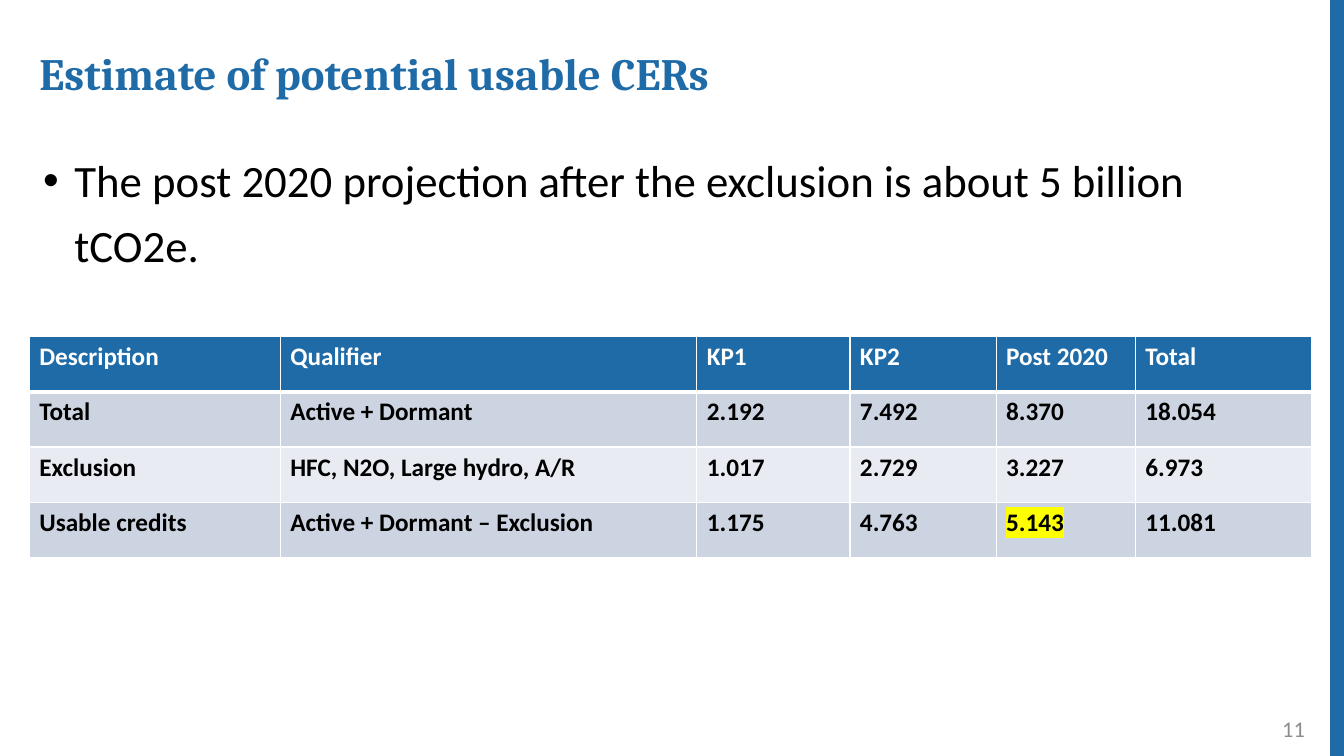
from dataclasses import dataclass

from lxml import etree
from pptx import Presentation
from pptx.dml.color import RGBColor
from pptx.enum.shapes import MSO_CONNECTOR
from pptx.enum.text import MSO_ANCHOR, PP_ALIGN
from pptx.oxml.ns import qn
from pptx.util import Inches, Pt

STRAIGHT = MSO_CONNECTOR.STRAIGHT
TOP, MIDDLE = MSO_ANCHOR.TOP, MSO_ANCHOR.MIDDLE
LEFT, RIGHT = PP_ALIGN.LEFT, PP_ALIGN.RIGHT


@dataclass(frozen=True)
class Theme:
    blue: str = "1F6BA7"
    black: str = "000000"
    white: str = "FFFFFF"
    grey: str = "8C8C8C"
    bands: tuple = ("CDD4E1", "E8EBF1")
    yellow: str = "FFFF00"
    heading: str = "Cambria"
    body: str = "Calibri"
    large: int = 32
    cell: int = 18
    number: int = 16


THEME = Theme()
COLUMNS = (2.49, 4.13, 1.52, 1.45, 1.38, 1.75)
CREDITS = (
    ("Description", "Qualifier", "KP1", "KP2", "Post 2020", "Total"),
    ("Total", "Active + Dormant", "2.192", "7.492", "8.370", "18.054"),
    ("Exclusion", "HFC, N2O, Large hydro, A/R", "1.017", "2.729", "3.227", "6.973"),
    ("Usable credits", "Active + Dormant – Exclusion", "1.175", "4.763", "5.143", "11.081"),
)
HIGHLIGHTED = (3, 4)


def style_run(r, size, color, name=THEME.body, bold=False):
    r.font.size = Pt(size)
    r.font.name = name
    r.font.bold = bold
    r.font.color.rgb = RGBColor.from_string(color)


def add_text(s, box, text, size, color):
    tf = s.shapes.add_textbox(*map(Inches, box)).text_frame
    tf.word_wrap = True
    p = tf.paragraphs[0]
    p.text = text
    style_run(p.runs[0], size, color)
    return tf


def add_edge(s, x, height):
    edge = s.shapes.add_connector(STRAIGHT, Inches(x), 0, Inches(x), Inches(height))
    edge.line.color.rgb = RGBColor.from_string(THEME.blue)
    edge.line.width = Pt(12)
    etree.SubElement(edge._element.spPr, qn("a:effectLst"))


def set_title(s, box, text):
    title = s.shapes.title
    title.left, title.top, title.width, title.height = map(Inches, box)
    tf = title.text_frame
    tf.word_wrap = True
    tf.vertical_anchor = TOP
    p = tf.paragraphs[0]
    p.text = text
    p.alignment = LEFT
    p.line_spacing = 0.9
    style_run(p.runs[0], THEME.large, THEME.blue, THEME.heading, True)


def add_bullet(s, box, text):
    p = add_text(s, box, text, THEME.large, THEME.black).paragraphs[0]
    p.line_spacing = 1.2
    pPr = p._p.get_or_add_pPr()
    pPr.set("marL", str(Inches(0.31)))
    pPr.set("indent", str(-Inches(0.31)))
    etree.SubElement(pPr, qn("a:buFont"), typeface="Arial")
    etree.SubElement(pPr, qn("a:buChar"), char="•")


def add_page_number(s, box, text):
    tf = add_text(s, box, text, THEME.number, THEME.grey)
    tf.vertical_anchor = MIDDLE
    tf.paragraphs[0].alignment = RIGHT


def set_borders(cell, top, bottom):
    tcPr = cell._tc.get_or_add_tcPr()
    for i, (side, width) in enumerate((("L", 1), ("R", 1), ("T", top), ("B", bottom))):
        ln = etree.Element(qn(f"a:ln{side}"), w=str(Pt(width)))
        fill = etree.SubElement(ln, qn("a:solidFill"))
        etree.SubElement(fill, qn("a:srgbClr"), val=THEME.white)
        tcPr.insert(i, ln)


def highlight(r):
    mark = etree.Element(qn("a:highlight"))
    etree.SubElement(mark, qn("a:srgbClr"), val=THEME.yellow)
    r._r.rPr.find(qn("a:solidFill")).addnext(mark)


def add_credit_table(s, box):
    table = s.shapes.add_table(len(CREDITS), len(COLUMNS), *map(Inches, box)).table
    for column, width in zip(table.columns, COLUMNS):
        column.width = Inches(width)
    for i, values in enumerate(CREDITS):
        header = i == 0
        fill = THEME.blue if header else THEME.bands[(i - 1) % 2]
        for j, value in enumerate(values):
            cell = table.cell(i, j)
            cell.fill.solid()
            cell.fill.fore_color.rgb = RGBColor.from_string(fill)
            set_borders(cell, 3 if i == 1 else 1, 3 if header else 1)
            cell.text_frame.text = value
            r = cell.text_frame.paragraphs[0].runs[0]
            style_run(r, THEME.cell, THEME.white if header else THEME.black, bold=True)
            if (i, j) == HIGHLIGHTED:
                highlight(r)


def main():
    prs = Presentation()
    prs.slide_width, prs.slide_height = Inches(13.33), Inches(7.5)
    s = prs.slides.add_slide(prs.slide_layouts[5])
    add_edge(s, 13.27, 7.5)
    add_bullet(s, (0.33, 1.36, 12.7, 5.72),
               "The post 2020 projection after the exclusion is about 5 billion tCO2e.")
    set_title(s, (0.29, 0.46, 11.96, 0.58), "Estimate of potential usable CERs")
    add_page_number(s, (10.04, 7.03, 3, 0.4), "11")
    add_credit_table(s, (0.29, 3.34, sum(COLUMNS), 2.19))
    prs.save("out.pptx")


if __name__ == "__main__":
    main()
